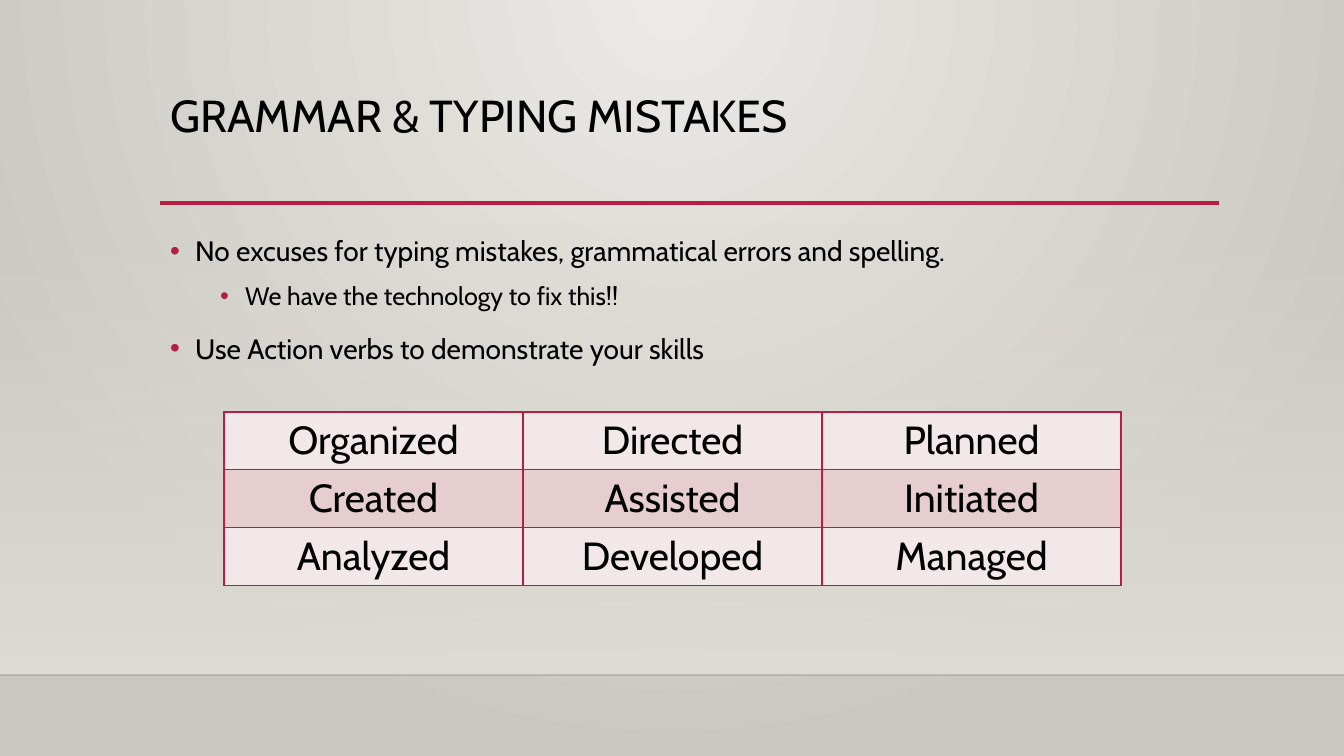
import collections
import dataclasses

import lxml.etree
import pptx
import pptx.dml.color
import pptx.enum.shapes
import pptx.enum.text
import pptx.oxml.ns
import pptx.util

PX = 914400 / 100.8
Box = collections.namedtuple("Box", "left top width height")


@dataclasses.dataclass(frozen=True)
class Theme:
    """Colours, font and type sizes of the slide."""
    font: str = "Cabin"
    ink: str = "000000"
    accent: str = "B71E42"
    glow: str = "ECEAE7"
    edge: str = "CAC7C1"
    wall: str = "DFDBD5"
    floor_line: str = "000001"
    row_fills: tuple = ("F3E8E9", "E6CDCF")
    title_size: int = 32
    bullet_sizes: tuple = (20, 18)
    verb_size: int = 28


THEME = Theme()
SLIDE = Box(0, 0, 1344, 756)
WALL = Box(0, 223, 1344, 452)
TITLE = Box(160, 89, 1059, 116)
BODY = Box(160, 222, 1059, 380)
VERB_GRID = Box(224, 412, 897, 171)

BULLETS = [
    (0, "No excuses for typing mistakes, grammatical errors and spelling."),
    (1, "We have the technology to fix this!!"),
    (0, "Use Action verbs to demonstrate your skills"),
]
VERBS = [
    ["Organized", "Directed", "Planned"],
    ["Created", "Assisted", "Initiated"],
    ["Analyzed", "Developed", "Managed"],
]


def px(length):
    """Turn pixels into EMU."""
    return pptx.util.Emu(round(length * PX))


def rgb(colour):
    """Turn a hex string into a colour."""
    return pptx.dml.color.RGBColor.from_string(colour)


def child(parent, tag, **attributes):
    """Append a DrawingML element to its parent."""
    return lxml.etree.SubElement(parent, pptx.oxml.ns.qn(tag), attributes)


def set_opacity(owner, percents):
    """Give the colours inside an element their opacities, in order."""
    colours = owner.iter(pptx.oxml.ns.qn("a:srgbClr"))
    for colour, percent in zip(colours, percents):
        child(colour, "a:alpha", val=str(percent * 1000))


def set_gradient(fill, colours):
    """Make a fill a two-colour gradient."""
    fill.gradient()
    for stop, colour in zip(fill.gradient_stops, colours):
        stop.color.rgb = rgb(colour)


def add_text(paragraph, text, size):
    """Add one run in the theme font."""
    run = paragraph.add_run()
    run.text = text
    run.font.name = THEME.font
    run.font.size = pptx.util.Pt(size)
    run.font.color.rgb = rgb(THEME.ink)


def place(shape, box):
    """Move a shape into its box."""
    shape.left, shape.top, shape.width, shape.height = map(px, box)


def add_rule(slide, box, colour, width):
    """Draw a horizontal line along the bottom of a box."""
    bottom = px(box.top + box.height)
    rule = slide.shapes.add_connector(
        pptx.enum.shapes.MSO_CONNECTOR.STRAIGHT,
        px(box.left), bottom, px(box.left + box.width), bottom)
    rule.line.color.rgb = rgb(colour)
    rule.line.width = pptx.util.Pt(width)
    child(rule._element.spPr, "a:effectLst")
    return rule


def add_backdrop(slide, box):
    """Paint the glow, the fading wall and the floor line."""
    set_gradient(slide.background.fill, (THEME.glow, THEME.edge))
    glow = next(slide.element.iter(pptx.oxml.ns.qn("a:gradFill")))
    glow.remove(glow.find(pptx.oxml.ns.qn("a:lin")))
    circle = child(glow, "a:path", path="circle")
    child(circle, "a:fillToRect", l="43000", t="0", r="43000", b="100000")

    wall = slide.shapes.add_shape(
        pptx.enum.shapes.MSO_SHAPE.RECTANGLE, *map(px, box))
    wall.shadow.inherit = False
    wall.line.fill.background()
    set_gradient(wall.fill, (THEME.wall, THEME.wall))
    wall.fill.gradient_angle = 270
    set_opacity(wall._element.spPr, (0, 100))
    slide.shapes._spTree.insert(2, wall._element)

    floor = add_rule(slide, box, THEME.floor_line, 1)
    set_opacity(floor._element.spPr, (20,))


def add_title(slide, box, text):
    """Fill the title placeholder and underline it."""
    title = slide.shapes.title
    place(title, box)
    frame = title.text_frame
    frame.vertical_anchor = pptx.enum.text.MSO_ANCHOR.TOP
    frame.auto_size = pptx.enum.text.MSO_AUTO_SIZE.NONE
    heading = frame.paragraphs[0]
    heading.alignment = pptx.enum.text.PP_ALIGN.LEFT
    heading.line_spacing = 0.9
    add_text(heading, text, THEME.title_size)
    add_rule(slide, box._replace(height=box.height - 2), THEME.accent, 2.5)


def add_bullets(slide, box, bullets):
    """Fill the body placeholder with a two-level list."""
    body = slide.placeholders[1]
    place(body, box)
    frame = body.text_frame
    frame.auto_size = pptx.enum.text.MSO_AUTO_SIZE.NONE
    for index, (level, text) in enumerate(bullets):
        item = frame.add_paragraph() if index else frame.paragraphs[0]
        item.level = level
        properties = item._p.get_or_add_pPr()
        properties.set("marL", str(px(25 + 50 * level)))
        properties.set("indent", str(-px(25)))
        child(child(properties, "a:buClr"), "a:srgbClr", val=THEME.accent)
        child(properties, "a:buFont", typeface="Arial")
        child(properties, "a:buChar", char="•")
        item.line_spacing = 1.2
        item.space_before = pptx.util.Pt((10, 5)[level] if index else 0)
        add_text(item, text, THEME.bullet_sizes[level])


def add_borders(cell):
    """Outline a table cell in the accent colour."""
    properties = cell._tc.get_or_add_tcPr()
    for index, side in enumerate(("a:lnL", "a:lnR", "a:lnT", "a:lnB")):
        border = child(properties, side, w=str(pptx.util.Pt(1)))
        child(child(border, "a:solidFill"), "a:srgbClr", val=THEME.accent)
        properties.insert(index, border)


def add_verb_grid(slide, box, verbs):
    """Add the table of action verbs with alternating row fills."""
    grid = slide.shapes.add_table(
        len(verbs), len(verbs[0]), *map(px, box)).table
    grid.first_row = False
    grid.horz_banding = False
    for row, names in enumerate(verbs):
        for column, verb in enumerate(names):
            cell = grid.cell(row, column)
            cell.fill.solid()
            cell.fill.fore_color.rgb = rgb(THEME.row_fills[row % 2])
            add_borders(cell)
            paragraph = cell.text_frame.paragraphs[0]
            paragraph.alignment = pptx.enum.text.PP_ALIGN.CENTER
            add_text(paragraph, verb, THEME.verb_size)


def main():
    """Build and save the slide."""
    deck = pptx.Presentation()
    deck.slide_width, deck.slide_height = px(SLIDE.width), px(SLIDE.height)
    slide = deck.slides.add_slide(deck.slide_layouts[1])
    add_backdrop(slide, WALL)
    add_title(slide, TITLE, "GRAMMAR & TYPING MISTAKES")
    add_bullets(slide, BODY, BULLETS)
    add_verb_grid(slide, VERB_GRID, VERBS)
    deck.save("out.pptx")


if __name__ == "__main__":
    main()
